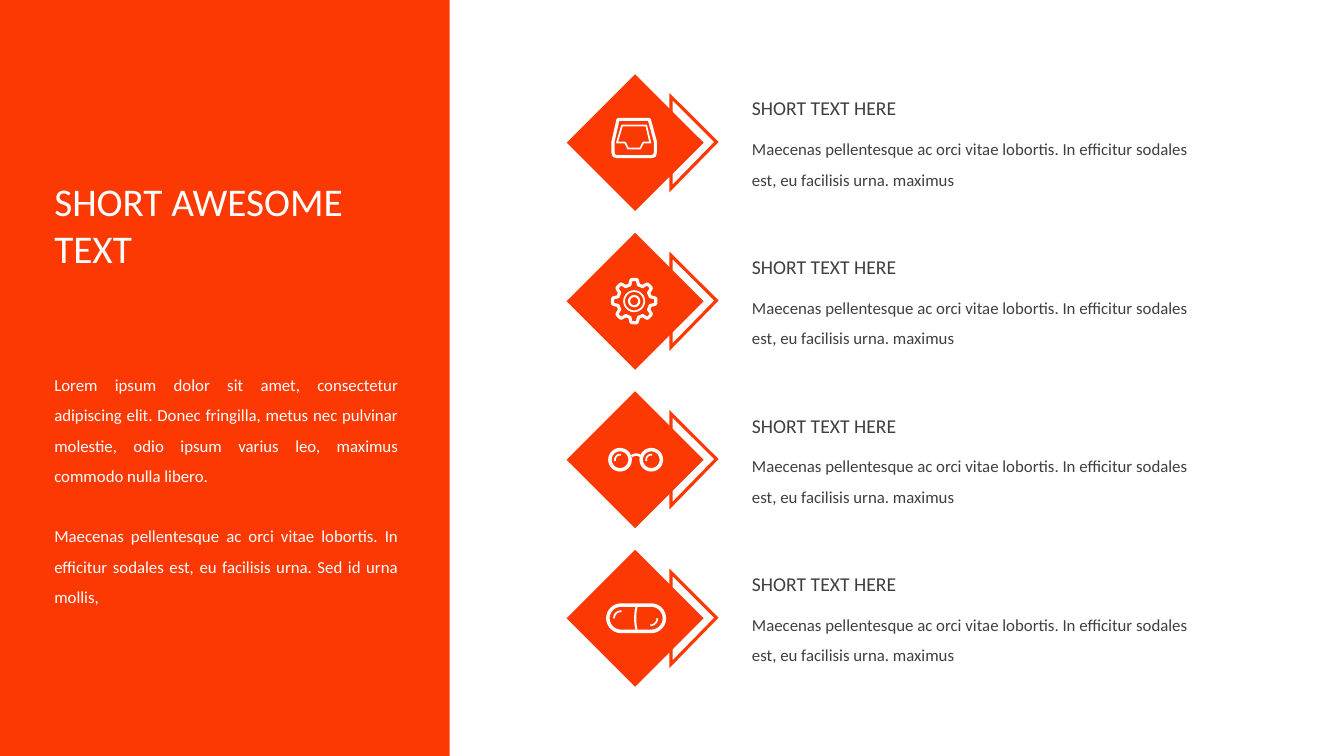
from math import cos, pi, radians, sin
from lxml.etree import SubElement
from pptx import Presentation
from pptx.dml.color import RGBColor
from pptx.enum.shapes import MSO_SHAPE
from pptx.enum.text import MSO_AUTO_SIZE, PP_ALIGN
from pptx.oxml.ns import qn
from pptx.util import Inches, Pt

ORANGE = RGBColor(0xFC, 0x39, 0x03)
WHITE = RGBColor(0xFF, 0xFF, 0xFF)
GRAY = RGBColor(0x3F, 0x3F, 0x3F)

presentation = Presentation()
presentation.slide_width = Inches(13.33)
presentation.slide_height = Inches(7.5)
slide = presentation.slides.add_slide(presentation.slide_layouts[6])


def add_text(left, top, width, height, texts, size, color, paragraph_format):
    box = slide.shapes.add_textbox(Inches(left), Inches(top), Inches(width), Inches(height))
    frame = box.text_frame
    frame.word_wrap = True
    frame.auto_size = MSO_AUTO_SIZE.SHAPE_TO_FIT_TEXT
    for index, text in enumerate(texts):
        paragraph = frame.paragraphs[0] if index == 0 else frame.add_paragraph()
        for name, value in paragraph_format.items():
            setattr(paragraph, name, value)
        if index:
            paragraph.space_before = Pt(size * 1.8)
        run = paragraph.add_run()
        run.text = text
        for name, value in {"name": "Calibri", "size": Pt(size)}.items():
            setattr(run.font, name, value)
        run.font.color.rgb = color


def arc(center_x, center_y, radius, start=0, end=360):
    steps = 32
    angles = [radians(start + (end - start) * step / steps) for step in range(steps + 1)]
    return [(center_x + radius * cos(a), center_y + radius * sin(a)) for a in angles]


panel = slide.shapes.add_shape(
    MSO_SHAPE.RECTANGLE, 0, 0, Inches(4.46), presentation.slide_height)
panel.shadow.inherit = False
panel.fill.solid()
panel.fill.fore_color.rgb = ORANGE
panel.line.fill.background()

add_text(0.44, 1.71, 3.3, 1.04, ["SHORT AWESOME TEXT"], 28, WHITE, {})
add_text(0.44, 3.57, 3.61, 2.52, [
    "Lorem ipsum dolor sit amet, consectetur adipiscing elit. Donec fringilla, "
    "metus nec pulvinar molestie, odio ipsum varius leo, maximus commodo nulla libero.",
    "Maecenas pellentesque ac orci vitae lobortis. In efficitur sodales est, "
    "eu facilisis urna. Sed id urna mollis,",
], 12, WHITE, {"alignment": PP_ALIGN.JUSTIFY, "line_spacing": 1.5})

gear_rim = []
for step in range(240):
    angle = 2 * pi * step / 240
    radius = 0.19 + 0.025 * max(-1, min(1, 2 * cos(8 * angle)))
    gear_rim.append((radius * cos(angle) - 0.01, radius * sin(angle)))

tray = [
    ([(-0.17, -0.23), (0.14, -0.23), (0.2, -0.01), (0.2, 0.1), (0.19, 0.13), (0.16, 0.14),
      (-0.18, 0.14), (-0.21, 0.13), (-0.22, 0.1), (-0.22, -0.01)], 2.25, True),
    ([(-0.13, -0.17), (0.11, -0.17), (0.15, 0), (0.08, 0), (0.05, 0.06),
      (-0.07, 0.06), (-0.1, 0), (-0.18, 0)], 1.25, True),
]
gear = [
    (gear_rim, 2.25, True),
    (arc(-0.01, 0, 0.1), 1.25, True),
    (arc(-0.01, 0, 0.05), 1.5, True),
]
glasses = [(arc(0.01, 0.02, 0.07, 230, 310), 1.75, False)]
for lens in (-0.15, 0.16):
    glasses.append((arc(lens, 0, 0.1), 2.5, True))
    glasses.append((arc(lens, 0, 0.05, 165, 280), 1.25, False))
pill = [
    (arc(-0.14, 0, 0.13, 90, 270) + arc(0.16, 0, 0.13, -90, 90), 2.5, True),
    (arc(0.5, 0, 0.5, 167, 193), 1.5, False),
    (arc(-0.14, 0, 0.07, 180, 275), 1.25, False),
    (arc(0.15, 0, 0.07, 0, 90), 1.25, False),
]

CENTER_X, FIRST_ROW, ROW_PITCH = 6.3, 1.415, 1.573
marks = [
    (MSO_SHAPE.ISOSCELES_TRIANGLE, 0.58, 0.91, 0.45, 90),
    (MSO_SHAPE.RECTANGLE, 0, 0.93, 0.93, 315),
]

for row, icon in enumerate([tray, gear, glasses, pill]):
    center_y = FIRST_ROW + row * ROW_PITCH
    for kind, offset, width, height, rotation in marks:
        mark = slide.shapes.add_shape(
            kind, Inches(CENTER_X + offset - width / 2), Inches(center_y - height / 2),
            Inches(width), Inches(height))
        mark.rotation = rotation
        mark.shadow.inherit = False
        if kind == MSO_SHAPE.RECTANGLE:
            mark.fill.solid()
            mark.fill.fore_color.rgb = ORANGE
        else:
            mark.adjustments[0] = 0.493
            mark.fill.background()
        mark.line.color.rgb = ORANGE
        mark.line.width = Pt(2.25)
        SubElement(mark.line._get_or_add_ln(), qn("a:miter")).set("lim", "800000")

    for points, weight, closed in icon:
        corners = [(Inches(CENTER_X + x), Inches(center_y + y)) for x, y in points]
        builder = slide.shapes.build_freeform(*corners[0], scale=1.0)
        builder.add_line_segments(corners[1:], close=closed)
        stroke = builder.convert_to_shape()
        stroke.shadow.inherit = False
        stroke.fill.background()
        stroke.line.color.rgb = WHITE
        stroke.line.width = Pt(weight)

    add_text(7.36, center_y - 0.185, 4.55, 0.68, [
        "Maecenas pellentesque ac orci vitae lobortis. In efficitur sodales est, "
        "eu facilisis urna. maximus"], 12, GRAY, {"line_spacing": 1.5})
    add_text(7.36, center_y - 0.625, 2.92, 0.42, ["SHORT TEXT HERE"], 14, GRAY,
             {"line_spacing": 1.5})

presentation.save("out.pptx")
